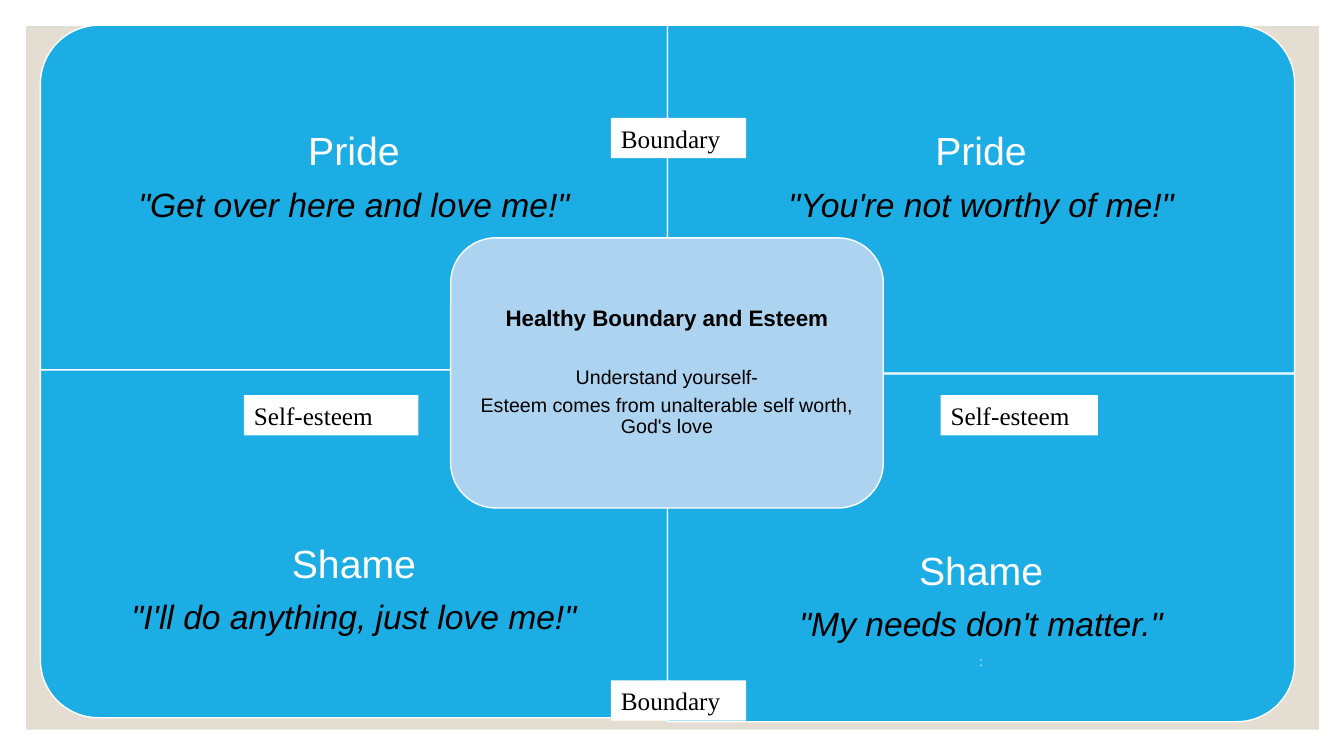
"""Build the boundary and self-esteem quadrant slide."""
from dataclasses import dataclass

from pptx import Presentation
from pptx.dml.color import RGBColor
from pptx.enum.shapes import MSO_SHAPE as Shape
from pptx.enum.text import MSO_ANCHOR as Anchor, MSO_AUTO_SIZE as Fit, PP_ALIGN as Align
from pptx.util import Inches, Pt


@dataclass(frozen=True)
class Theme:
    """Colours, fonts and type sizes of the slide."""
    sand: str = "E3DED1"
    blue: str = "1CADE4"
    pale: str = "ACD3EF"
    white: str = "FFFFFF"
    black: str = "000000"
    sans: str = "Arial"
    serif: str = "Times New Roman"
    head: int = 28
    quote: int = 24
    label: int = 18
    lead: int = 16
    body: int = 14
    tiny: int = 9


T = Theme()


def add_block(slide, kind, box, fill, line=None, turn=0):
    """Add a filled shape that covers the box once it is turned."""
    x, y, w, h = box
    if turn % 180:
        x, y, w, h = x + (w - h) / 2, y + (h - w) / 2, h, w
    block = slide.shapes.add_shape(kind, Inches(x), Inches(y), Inches(w), Inches(h))
    block.rotation = turn
    block.shadow.inherit = False
    block.fill.solid()
    block.fill.fore_color.rgb = RGBColor.from_string(fill)
    if line:
        block.line.color.rgb = RGBColor.from_string(line)
        block.line.width = Pt(1)
    else:
        block.line.fill.background()
    return block


def set_frame(frame, anchor, side, edge):
    """Set wrapping, anchor and insets of a text frame."""
    frame.word_wrap = True
    frame.vertical_anchor = anchor
    frame.margin_left = frame.margin_right = Inches(side)
    frame.margin_top = frame.margin_bottom = Inches(edge)


def add_text(frame, text, size, color=T.black, font=T.sans, bold=False,
             italic=False, align=Align.CENTER, space=0.9, after=None):
    """Write one formatted paragraph into the frame."""
    para = frame.paragraphs[0]
    if para.runs:
        para = frame.add_paragraph()
    para.alignment = align
    para.line_spacing = space
    para.space_after = Pt(size * 0.35 if after is None else after)
    run = para.add_run()
    run.text = text
    run.font.size = Pt(size)
    run.font.name = font
    run.font.bold = bold
    run.font.italic = italic
    run.font.color.rgb = RGBColor.from_string(color)


def add_quad(slide, box, turn, drop, head, quote, mark=None):
    """Add a quadrant with its heading and quote, drop inches down."""
    add_block(slide, Shape.ROUND_1_RECTANGLE, box, T.blue, T.white, turn)
    x, y, w, h = box
    area = slide.shapes.add_textbox(Inches(x), Inches(y + drop), Inches(w), Inches(1.25))
    set_frame(area.text_frame, Anchor.TOP, 0.12, 0)
    add_text(area.text_frame, head, T.head, color=T.white)
    add_text(area.text_frame, quote, T.quote, italic=True)
    if mark:
        add_text(area.text_frame, mark, T.tiny, color=T.white)


def add_core(slide, box):
    """Add the rounded centre panel with its message."""
    core = add_block(slide, Shape.ROUNDED_RECTANGLE, box, T.pale, T.white)
    frame = core.text_frame
    set_frame(frame, Anchor.MIDDLE, 0.07, 0.07)
    add_text(frame, "Healthy Boundary and Esteem", T.lead, bold=True, after=25.7)
    add_text(frame, "Understand yourself-", T.body)
    add_text(frame, "Esteem comes from unalterable self worth, God's love", T.body, after=0)


def add_label(slide, box, text):
    """Add a white axis label."""
    label = add_block(slide, Shape.RECTANGLE, box, T.white)
    set_frame(label.text_frame, Anchor.TOP, 0.1, 0.05)
    label.text_frame.auto_size = Fit.SHAPE_TO_FIT_TEXT
    add_text(label.text_frame, text, T.label, font=T.serif,
             align=Align.LEFT, space=1.0, after=0)


def main():
    """Build and save the slide."""
    deck = Presentation()
    deck.slide_width, deck.slide_height = Inches(13.33), Inches(7.5)
    slide = deck.slides.add_slide(deck.slide_layouts[6])
    add_block(slide, Shape.RECTANGLE, (0.26, 0.26, 12.82, 6.98), T.sand)

    left, top, wide, high = 0.4, 0.25, 6.22, 3.45
    mid = left + wide
    quads = (
        ((left, top, wide, 3.5), 270, 1.06, "Pride", '"Get over here and love me!"'),
        ((mid, top, wide, high), 0, 1.06, "Pride", '"You\'re not worthy of me!"'),
        ((left, 3.67, wide, high), 180, 1.73, "Shame", '"I\'ll do anything, just love me!"'),
        ((mid, 3.71, wide, high), 90, 1.76, "Shame", '"My needs don\'t matter."', ":"),
    )
    for quad in quads:
        add_quad(slide, *quad)

    add_core(slide, (4.47, 2.36, 4.29, 2.68))

    for y in (1.17, 6.75):
        add_label(slide, (6.06, y, 1.34, 0.4), "Boundary")
    for x, w in ((9.33, 1.56), (2.42, 1.73)):
        add_label(slide, (x, 3.92, w, 0.4), "Self-esteem")
    deck.save("out.pptx")


if __name__ == "__main__":
    main()
